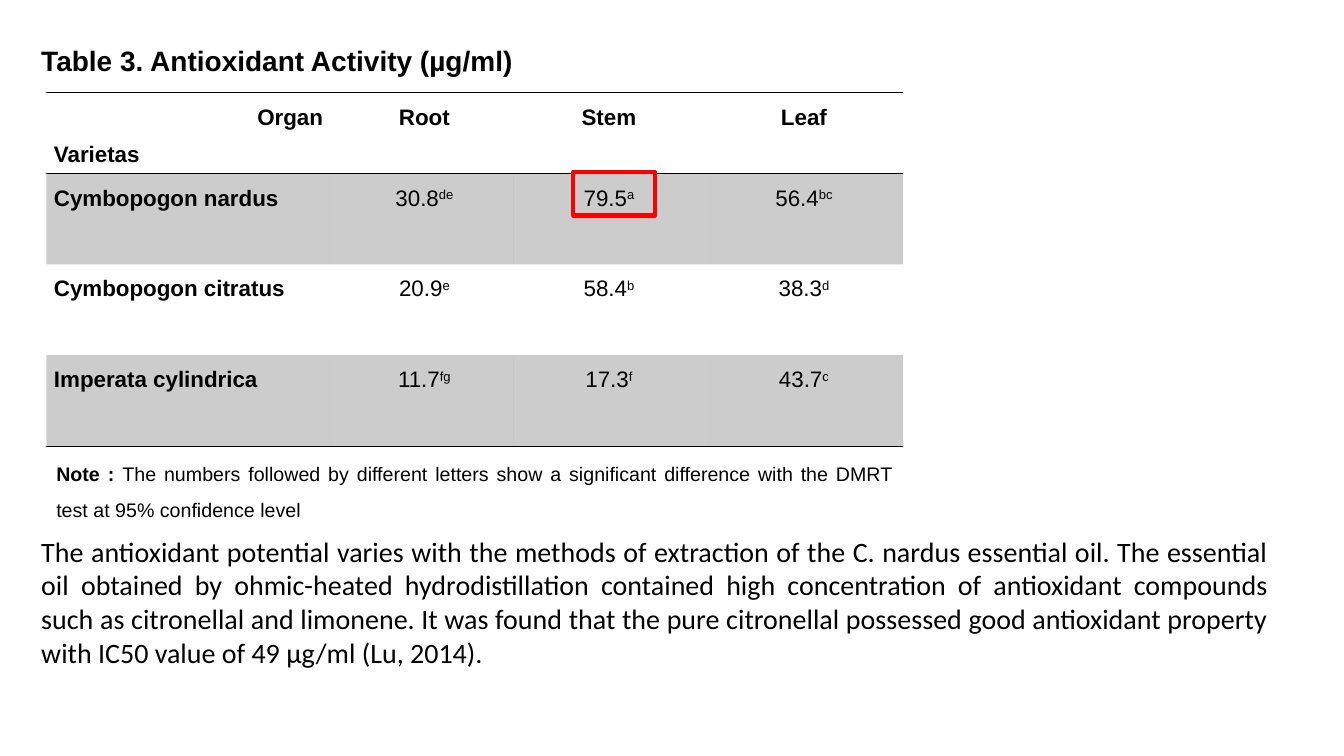
import pptx
import pptx.util
import pptx.dml.color
import pptx.enum.shapes
import pptx.enum.text
import lxml.etree

Cm, Pt = pptx.util.Cm, pptx.util.Pt
ALIGN = pptx.enum.text.PP_ALIGN
NS = "http://schemas.openxmlformats.org/drawingml/2006/main"
PLAIN = "{2D5ABB26-0587-4C30-8999-92F81FD0307C}"
HUES = {"ink": "000000", "mark": "FF0000"}

WIDTHS = [7.29, 4.47, 4.83, 5.0]
HEAD, BODY = 1.85, 2.29
ORGANS = ["Root", "Stem", "Leaf"]
PLANTS = [
    ("Cymbopogon nardus", [("30.8", "de"), ("79.5", "a"), ("56.4", "bc")]),
    ("Cymbopogon citratus", [("20.9", "e"), ("58.4", "b"), ("38.3", "d")]),
    ("Imperata cylindrica", [("11.7", "fg"), ("17.3", "f"), ("43.7", "c")]),
]
REMARK = ("The numbers followed by different letters show a significant "
          "difference with the DMRT test at 95% confidence level")
STORY = (
    "The antioxidant potential varies with the methods of extraction of the "
    "C. nardus essential oil. The essential oil obtained by ohmic-heated "
    "hydrodistillation contained high concentration of antioxidant compounds "
    "such as citronellal and limonene. It was found that the pure citronellal "
    "possessed good antioxidant property with IC50 value of 49 μg/ml "
    "(Lu, 2014).")


def hue(name):
    return pptx.dml.color.RGBColor.from_string(HUES[name])


def add_run(para, text, size, bold=False, face="Arial", raised=False):
    run = para.add_run()
    run.text = text
    run.font.size, run.font.bold, run.font.name = Pt(size), bold, face
    run.font.color.rgb = hue("ink")
    if raised:
        run.font._element.set("baseline", "30000")


def add_text(slide, box):
    """Add a wrapping text box and return its first paragraph."""
    frame = slide.shapes.add_textbox(*map(Cm, box)).text_frame
    frame.word_wrap = True
    return frame.paragraphs[0]


def add_title(slide, box):
    para = add_text(slide, box)
    add_run(para, "Table 3. Antioxidant Activity (µg/ml)", 20, True)


def add_note(slide, box):
    para = add_text(slide, box)
    para.alignment, para.line_spacing = ALIGN.JUSTIFY, 1.5
    add_run(para, "Note : ", 14, True)
    add_run(para, REMARK, 14)


def add_story(slide, box):
    para = add_text(slide, box)
    para.alignment = ALIGN.JUSTIFY
    add_run(para, STORY, 20, face="Calibri")


def set_para(para, align):
    para.alignment, para.line_spacing = align, 1.5
    return para


def rule_cell(cell, sides):
    """Draw black rules on the given sides, T before B."""
    props = cell._tc.get_or_add_tcPr()
    for spot, side in enumerate(sides):
        line = lxml.etree.Element(f"{{{NS}}}ln{side}", w=str(Pt(1)))
        fill = lxml.etree.SubElement(line, f"{{{NS}}}solidFill")
        lxml.etree.SubElement(fill, f"{{{NS}}}srgbClr", val=HUES["ink"])
        props.insert(spot, line)


def shade_cell(cell):
    """Fill with black at 20 % opacity."""
    cell.fill.solid()
    cell.fill.fore_color.rgb = hue("ink")
    tint = cell._tc.tcPr.find(f".//{{{NS}}}srgbClr")
    lxml.etree.SubElement(tint, f"{{{NS}}}alpha", val="20000")


def add_grid(slide, box):
    rows, cols = len(PLANTS) + 1, len(WIDTHS)
    grid = slide.shapes.add_table(rows, cols, *map(Cm, box)).table
    grid.first_row = grid.horz_banding = False
    grid._tbl.tblPr.find(f"{{{NS}}}tableStyleId").text = PLAIN
    for col, width in zip(grid.columns, WIDTHS):
        col.width = Cm(width)
    for r, row in enumerate(grid.rows):
        row.height = Cm(BODY if r else HEAD)
        for cell in row.cells:
            cell.margin_left = cell.margin_right = Cm(0.19)
            cell.margin_top = cell.margin_bottom = 0
            if r % 2:
                shade_cell(cell)
            else:
                cell.fill.background()
            rule_cell(cell, {0: "TB", rows - 1: "B"}.get(r, ""))

    corner = grid.cell(0, 0)
    corner.margin_right = Cm(0.32)
    frame = corner.text_frame
    add_run(set_para(frame.paragraphs[0], ALIGN.RIGHT), "Organ", 16, True)
    add_run(set_para(frame.add_paragraph(), ALIGN.JUSTIFY), "Varietas", 16, True)
    for c, organ in enumerate(ORGANS, 1):
        para = grid.cell(0, c).text_frame.paragraphs[0]
        add_run(set_para(para, ALIGN.CENTER), organ, 16, True)
    for r, (plant, values) in enumerate(PLANTS, 1):
        para = grid.cell(r, 0).text_frame.paragraphs[0]
        add_run(set_para(para, ALIGN.JUSTIFY), plant, 16, True)
        for c, (value, group) in enumerate(values, 1):
            para = set_para(grid.cell(r, c).text_frame.paragraphs[0], ALIGN.CENTER)
            add_run(para, value, 16)
            add_run(para, group, 16, raised=True)


def add_mark(slide, box):
    """Frame the highest value."""
    kind = pptx.enum.shapes.MSO_SHAPE.RECTANGLE
    mark = slide.shapes.add_shape(kind, *map(Cm, box))
    mark.shadow.inherit = False
    mark.fill.background()
    mark.line.color.rgb = hue("mark")
    mark.line.width = Pt(3)


def main():
    deck = pptx.Presentation()
    deck.slide_width, deck.slide_height = Cm(33.87), Cm(19.05)
    slide = deck.slides.add_slide(deck.slide_layouts[6])
    add_title(slide, (0.79, 0.97, 30.23, 1.1))
    add_grid(slide, (1.17, 2.34, sum(WIDTHS), HEAD + BODY * len(PLANTS)))
    add_note(slide, (1.17, 11.23, 21.59, 1.96))
    add_story(slide, (0.79, 13.34, 31.42, 3.68))
    add_mark(slide, (14.45, 4.34, 2.06, 1.09))
    deck.save("out.pptx")


if __name__ == "__main__":
    main()
